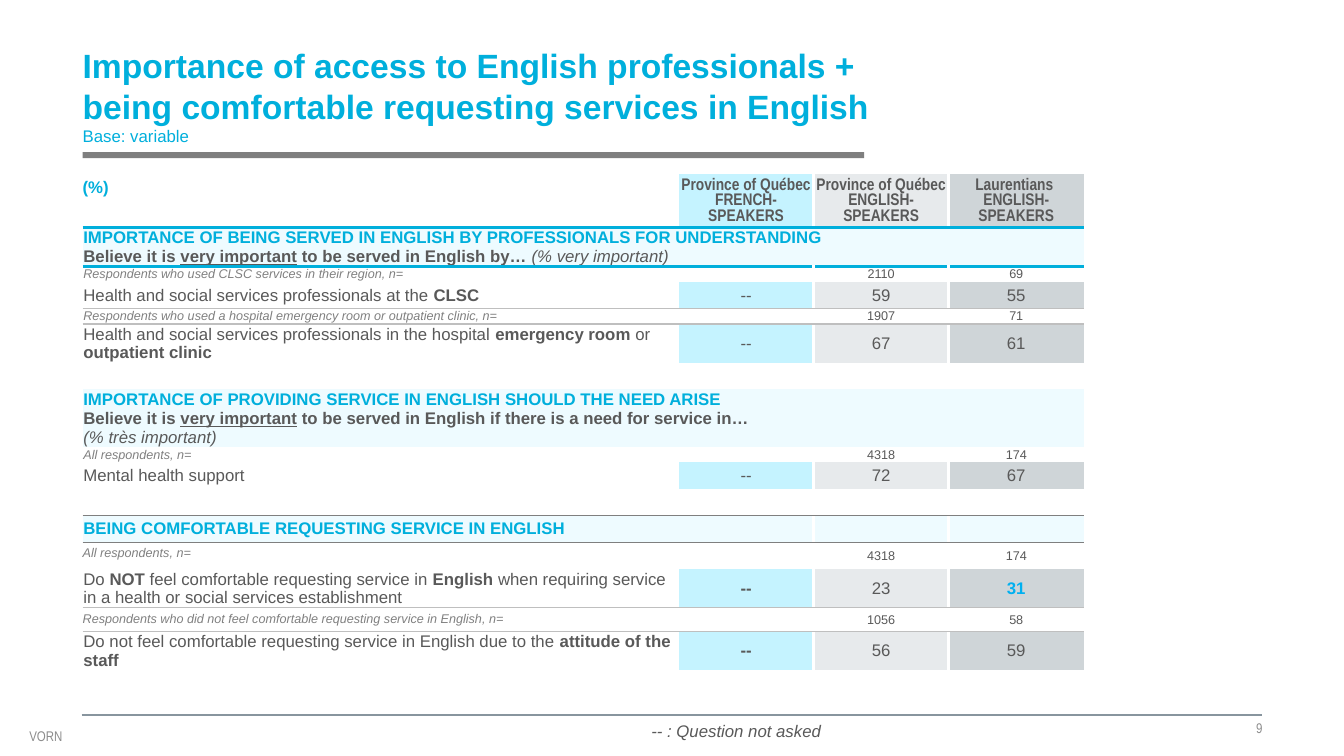
import collections
import pptx
import pptx.dml.color
import pptx.enum.shapes
import pptx.enum.text
import pptx.oxml
import pptx.oxml.ns
import pptx.util

Box = collections.namedtuple("Box", "left top width height")
Row = collections.namedtuple("Row", "kind height label values")
ALIGN = pptx.enum.text.PP_ALIGN
ANCHOR = pptx.enum.text.MSO_ANCHOR

# Colours and type sizes
THEME = {
    "accent": "00AFDC", "highlight": "00B0F0", "body": "595959", "count": "808080",
    "footer": "8C8C8C", "bar": "7F7F7F", "rule": "88959E", "divider": "BFBFBF",
    "white": "FFFFFF", "band": "EEFBFF", "groups": ["C5F3FF", "E7EAEC", "CFD5D8"],
    "font": "Arial", "narrow": "Arial Narrow",
    "title": 24, "text": 12, "small": 10, "tiny": 9, "gap": 6,
}
COLUMNS, ROWS = 1333, 750  # page grid, one hundredth of an inch per step
TABLE_COLUMNS = [591, 134, 134, 134]
NO_STYLE = "{2D5ABB26-0587-4C30-8999-92F81FD0307C}"
BOLD, ITALIC = {"bold": True}, {"italic": True}
UNDERLINED = {"bold": True, "underline": True}
HEADING = {"bold": True, "color": THEME["accent"]}
NOT_ASKED = ("--", {})

# Table content: each label is a list of paragraphs, each paragraph a list of (text, format)
TABLE = [
    Row("header", 53, [[("(%)", HEADING)]],
        [["Province of Québec FRENCH-SPEAKERS"], ["Province of Québec ENGLISH-SPEAKERS"],
         ["Laurentians ", "ENGLISH-SPEAKERS"]]),
    Row("section", 38.5, [
        [("IMPORTANCE OF BEING SERVED IN ENGLISH BY PROFESSIONALS FOR UNDERSTANDING", HEADING)],
        [("Believe it is ", BOLD), ("very important", UNDERLINED),
         (" to be served in English by… ", BOLD), ("(% very important)", ITALIC)]], []),
    Row("count", 15, "Respondents who used CLSC services in their region, n=", ["2110", "69"]),
    Row("answer line", 26.5, [[("Health and social services professionals at the ", {}),
                               ("CLSC", BOLD)]], [NOT_ASKED, ("59", {}), ("55", {})]),
    Row("count", 15.5, "Respondents who used a hospital emergency room or outpatient clinic, n=",
        ["1907", "71"]),
    Row("answer", 38.5, [[("Health and social services professionals in the hospital ", {}),
                          ("emergency room", BOLD), (" or ", {}), ("outpatient clinic", BOLD)]],
        [NOT_ASKED, ("67", {}), ("61", {})]),
    Row("blank", 26.5, [], []),
    Row("section", 57, [
        [("IMPORTANCE OF PROVIDING SERVICE IN ENGLISH SHOULD THE NEED ARISE", HEADING)],
        [("Believe it is ", BOLD), ("very important", UNDERLINED),
         (" to be served in English if there is a need for service in…", BOLD)],
        [("(% très important)", ITALIC)]], []),
    Row("count", 15, "All respondents, n=", ["4318", "174"]),
    Row("answer", 26.5, [[("Mental health support", {})]],
        [NOT_ASKED, ("72", {}), ("67", {})]),
    Row("blank line", 26.5, [], []),
    Row("split section", 26.5,
        [[("BEING COMFORTABLE REQUESTING SERVICE IN ENGLISH", HEADING)]], []),
    Row("padded count", 26.5, "All respondents, n=", ["4318", "174"]),
    Row("answer line", 38.5, [[
        ("Do ", {}), ("NOT ", BOLD), ("feel comfortable requesting service in ", {}),
        ("English ", BOLD),
        ("when requiring service in a health or social services establishment", {})]],
        [("--", BOLD), ("23", {}), ("31", {"bold": True, "color": THEME["highlight"]})]),
    Row("padded count", 23.5,
        "Respondents who did not feel comfortable requesting service in English, n=",
        ["1056", "58"]),
    Row("answer", 38.5, [[("Do not feel comfortable requesting service in English due to the ", {}),
                          ("attitude of the staff", BOLD)]],
        [("--", BOLD), ("56", {}), ("59", {})]),
]


def grid(steps):
    return pptx.util.Inches(steps / 100)


def rgb(value):
    return pptx.dml.color.RGBColor.from_string(value)


def set_values(target, values):
    for name, value in values.items():
        setattr(target, name, value)


def add_span(para, text, style):
    look = {"size": THEME["text"], "color": THEME["body"], "name": THEME["font"],
            "bold": False, "italic": False, **style}
    span = para.add_run()
    span.text = text
    span.font.color.rgb = rgb(look.pop("color"))
    look["size"] = pptx.util.Pt(look["size"])
    set_values(span.font, look)


def write(frame, paragraphs, **layout):
    for index, spans in enumerate(paragraphs):
        para = frame.add_paragraph() if index else frame.paragraphs[0]
        set_values(para, layout)
        for text, style in spans:
            add_span(para, text, style)


def plain_frame(frame, **extra):
    set_values(frame, {"margin_left": 0, "margin_top": 0, "margin_right": 0, "margin_bottom": 0,
                       "word_wrap": True, "vertical_anchor": ANCHOR.MIDDLE, **extra})


def add_text(page, box, paragraphs, align=ALIGN.LEFT):
    frame = page.shapes.add_textbox(*map(grid, box)).text_frame
    plain_frame(frame)
    write(frame, paragraphs, alignment=align)


# Title and the bar below it
def add_title(page, box):
    title = page.shapes.title
    set_values(title, dict(zip(box._fields, map(grid, box))))
    plain_frame(title.text_frame, auto_size=pptx.enum.text.MSO_AUTO_SIZE.NONE)
    para = title.text_frame.paragraphs[0]
    para.alignment = ALIGN.LEFT
    for text in ("Importance of access to English professionals +",
                 "being comfortable requesting services in English"):
        add_span(para, text, {**HEADING, "size": THEME["title"]})
        para.add_line_break()
    add_span(para, "Base: variable", {"color": THEME["accent"]})
    bar = page.shapes.add_shape(pptx.enum.shapes.MSO_SHAPE.RECTANGLE, grid(box.left),
                                grid(box.top + box.height + 1), grid(775), grid(6))
    bar.shadow.inherit = False
    bar.fill.solid()
    bar.fill.fore_color.rgb = rgb(THEME["bar"])
    bar.line.fill.background()


def add_border(cell, side, color, width):
    cell._tc.get_or_add_tcPr().append(pptx.oxml.parse_xml(
        f'<a:ln{side} {pptx.oxml.ns.nsdecls("a")} w="{pptx.util.Pt(width)}"><a:solidFill>'
        f'<a:srgbClr val="{color}"/></a:solidFill></a:ln{side}>'))


def bottom_line(kind):
    if kind == "header":
        return THEME["accent"], 2.25
    return {"answer line": (THEME["divider"], 1), "blank line": (THEME["bar"], 1)}.get(kind)


def frame_cell(cell, column, kind, kind_above):
    if kind != "section":
        for side, present in (("L", column > 1), ("R", 0 < column < 3)):
            if present:
                add_border(cell, side, THEME["white"], 2.25)
    for side, line in (("T", bottom_line(kind_above)), ("B", bottom_line(kind))):
        if line:
            add_border(cell, side, *line)


def fill_cell(cell, column, kind):
    color = THEME["white"]
    if "section" in kind:
        color = THEME["band"]
    elif column and ("header" in kind or "answer" in kind):
        color = THEME["groups"][column - 1]
    cell.fill.solid()
    cell.fill.fore_color.rgb = rgb(color)


def cell_content(row, column):
    """Paragraphs of one cell; counts leave the first group empty."""
    if column == 0:
        if "count" in row.kind:
            return [[(row.label, {"italic": True, "size": THEME["tiny"], "color": THEME["count"]})]]
        return row.label
    if not row.values:
        return []
    if row.kind == "header":
        return [[(text, {"bold": True, "name": THEME["narrow"]})] for text in row.values[column - 1]]
    if "count" in row.kind:
        return [[(row.values[column - 2], {"size": THEME["tiny"]})]] if column > 1 else []
    return [[row.values[column - 1]]]


def add_cell(cell, row, column, kind_above):
    hair = pptx.util.Pt(0.5)
    padded = column == 0 and row.kind in ("header", "padded count")
    side, edge = (0, grid(5)) if padded else (hair, hair)
    set_values(cell, {"margin_left": side, "margin_right": side, "margin_top": edge,
                      "margin_bottom": edge if padded else 0,
                      "vertical_anchor": ANCHOR.TOP if padded else ANCHOR.MIDDLE})
    frame_cell(cell, column, row.kind, kind_above)
    fill_cell(cell, column, row.kind)
    layout = {"alignment": ALIGN.CENTER if column else ALIGN.LEFT}
    if padded:
        layout["line_spacing"] = 0.95
    content = cell_content(row, column)
    write(cell.text_frame, content, **layout)
    if not content:
        end = cell.text_frame.paragraphs[0]._p.get_or_add_endParaRPr()
        end.set("sz", str(THEME["gap"] * 100))


# Results table
def add_results(page, box):
    table = page.shapes.add_table(len(TABLE), len(TABLE_COLUMNS), *map(grid, box)).table
    set_values(table, {"first_row": False, "horz_banding": False})
    table._tbl.tblPr.find(pptx.oxml.ns.qn("a:tableStyleId")).text = NO_STYLE
    for column, width in enumerate(TABLE_COLUMNS):
        table.columns[column].width = grid(width)
    kind_above = ""
    for index, row in enumerate(TABLE):
        table.rows[index].height = grid(row.height)
        for column in range(len(TABLE_COLUMNS)):
            add_cell(table.cell(index, column), row, column, kind_above)
        if row.kind == "section":
            table.cell(index, 0).merge(table.cell(index, len(TABLE_COLUMNS) - 1))
        kind_above = row.kind


# Footer rule, source name, note and page number
def add_footer(page, box):
    right = box.left + box.width
    rule = page.shapes.add_connector(pptx.enum.shapes.MSO_CONNECTOR.STRAIGHT, grid(box.left),
                                     grid(box.top), grid(right), grid(box.top))
    rule.line.color.rgb = rgb(THEME["rule"])
    rule.line.width = pptx.util.Pt(1.5)
    rule._element.spPr.append(pptx.oxml.parse_xml(f'<a:effectLst {pptx.oxml.ns.nsdecls("a")}/>'))
    small = {"size": THEME["small"], "color": THEME["footer"], "name": THEME["narrow"]}
    add_text(page, Box(29, box.top + 11, 41, 21), [[("VORN", small)]])
    add_text(page, Box(right - 379, box.top, 379, 26), [[("9", small)]], ALIGN.RIGHT)
    add_text(page, Box(646, box.top + 1, 180, 30), [[("-- : Question not asked", ITALIC)]])


def main():
    deck = pptx.Presentation()
    deck.slide_width, deck.slide_height = grid(COLUMNS), grid(ROWS)
    page = deck.slides.add_slide(deck.slide_layouts[5])
    add_title(page, Box(82, 40, 814, 110))
    add_results(page, Box(82, 173, sum(TABLE_COLUMNS), sum(row.height for row in TABLE)))
    add_footer(page, Box(81, 709, 1171, 31))
    deck.save("out.pptx")


if __name__ == "__main__":
    main()
